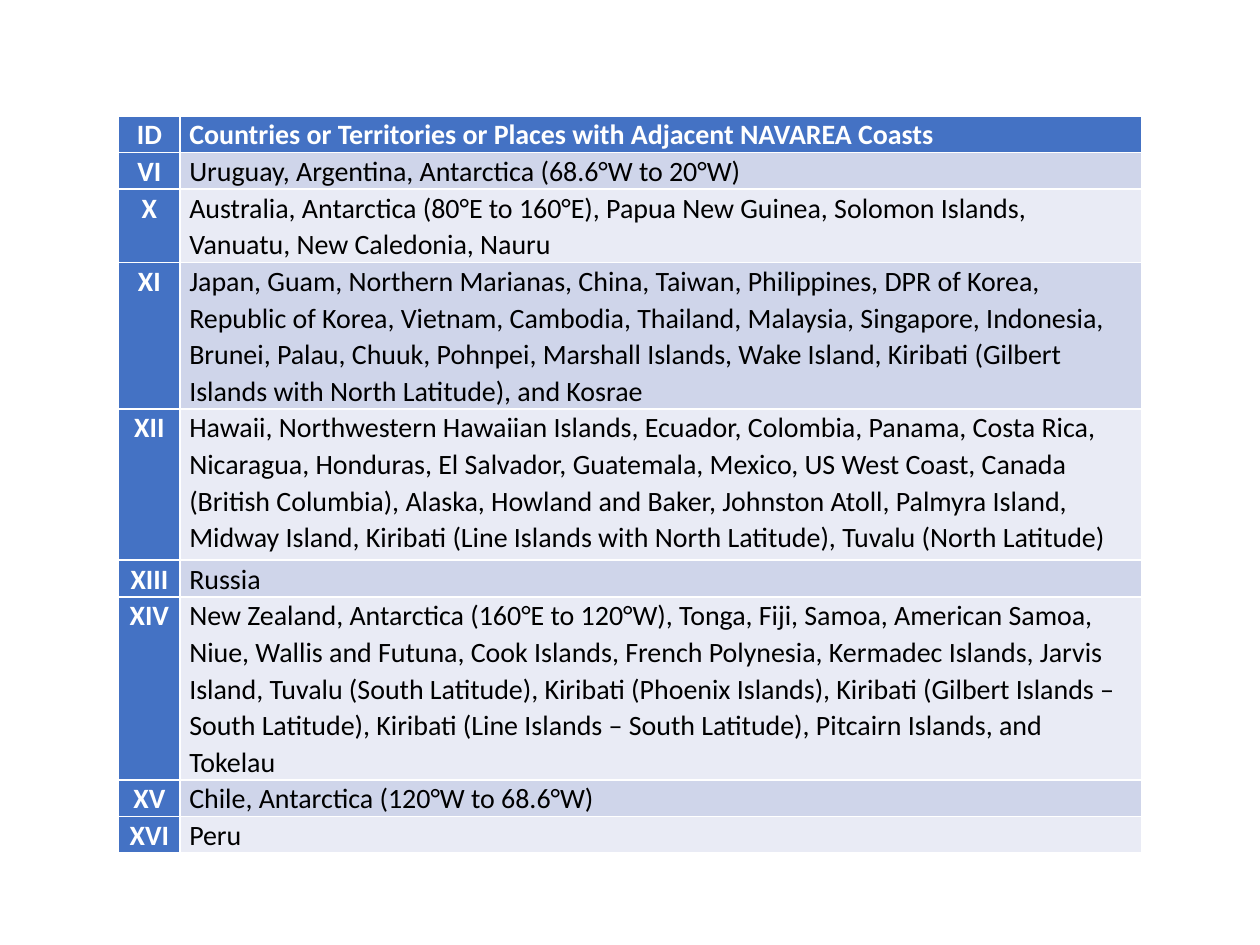
"""Build the slide that lists the coasts adjoining each NAVAREA."""
from dataclasses import dataclass

from pptx import Presentation
from pptx import util as u
from pptx.dml.color import RGBColor
from pptx.enum import text
from pptx.table import _Cell


@dataclass(frozen=True)
class Theme:
    """Colours and type of the table."""
    font: str = "Calibri"
    size: float = 16
    line_spacing: float = 1.07
    accent: str = "4472C4"
    bands: tuple[str, str] = ("CFD5EA", "E9EBF5")
    light: str = "FFFFFF"
    dark: str = "000000"


@dataclass(frozen=True)
class Area:
    """One table row: identifier, places and minimum height in points."""
    name: str
    places: str
    height: float = 13.7


THEME = Theme()
LEFT, TOP, HEIGHT = 67.7, 66.2, 415.4
COLUMNS = (35.3, 549.4)
AREAS = (
    Area("ID", "Countries or Territories or Places with Adjacent NAVAREA Coasts"),
    Area("VI", "Uruguay, Argentina, Antarctica (68.6°W to 20°W)"),
    Area("X", "Australia, Antarctica (80°E to 160°E), Papua New Guinea, Solomon Islands, "
         "Vanuatu, New Caledonia, Nauru", 28),
    Area("XI", "Japan, Guam, Northern Marianas, China, Taiwan, Philippines, DPR of Korea, "
         "Republic of Korea, Vietnam, Cambodia, Thailand, Malaysia, Singapore, Indonesia, "
         "Brunei, Palau, Chuuk, Pohnpei, Marshall Islands, Wake Island, Kiribati (Gilbert "
         "Islands with North Latitude), and Kosrae", 72),
    Area("XII", "Hawaii, Northwestern Hawaiian Islands, Ecuador, Colombia, Panama, Costa Rica, "
         "Nicaragua, Honduras, El Salvador, Guatemala, Mexico, US West Coast, Canada "
         "(British Columbia), Alaska, Howland and Baker, Johnston Atoll, Palmyra Island, "
         "Midway Island, Kiribati (Line Islands with North Latitude), Tuvalu (North Latitude)",
         86.4),
    Area("XIII", "Russia"),
    Area("XIV", "New Zealand, Antarctica (160°E to 120°W), Tonga, Fiji, Samoa, American Samoa, "
         "Niue, Wallis and Futuna, Cook Islands, French Polynesia, Kermadec Islands, Jarvis "
         "Island, Tuvalu (South Latitude), Kiribati (Phoenix Islands), Kiribati (Gilbert "
         "Islands – South Latitude), Kiribati (Line Islands – South Latitude), Pitcairn "
         "Islands, and Tokelau", 86.4),
    Area("XV", "Chile, Antarctica (120°W to 68.6°W)"),
    Area("XVI", "Peru"),
)


def fill_cell(cell: _Cell, words: str, fill: str, heading: bool, centred: bool) -> None:
    """Write and format one cell."""
    cell.fill.solid()
    cell.fill.fore_color.rgb = RGBColor.from_string(fill)
    cell.margin_left = cell.margin_right = u.Pt(5.2)
    cell.margin_top = cell.margin_bottom = 0
    cell.text = words
    para = cell.text_frame.paragraphs[0]
    para.alignment = text.PP_ALIGN.CENTER if centred else text.PP_ALIGN.LEFT
    para.line_spacing = THEME.line_spacing
    para.font.name = THEME.font
    para.font.size = u.Pt(THEME.size)
    para.font.bold = heading
    para.font.color.rgb = RGBColor.from_string(THEME.light if heading else THEME.dark)


def main() -> None:
    """Build and save the deck."""
    deck = Presentation()
    deck.slide_width, deck.slide_height = u.Pt(720), u.Pt(540)
    page = deck.slides.add_slide(deck.slide_layouts[6])
    frame = page.shapes.add_table(len(AREAS), len(COLUMNS), u.Pt(LEFT), u.Pt(TOP),
                                  u.Pt(sum(COLUMNS)), u.Pt(HEIGHT))
    table = frame.table
    table.first_col = True
    for column, width in zip(table.columns, COLUMNS):
        column.width = u.Pt(width)
    for index, area in enumerate(AREAS):
        table.rows[index].height = u.Pt(area.height)
        header = index == 0
        band = THEME.accent if header else THEME.bands[(index - 1) % 2]
        fill_cell(table.cell(index, 0), area.name, THEME.accent, True, True)
        fill_cell(table.cell(index, 1), area.places, band, header, False)
    frame.height = u.Pt(HEIGHT)
    deck.save("out.pptx")


if __name__ == "__main__":
    main()
